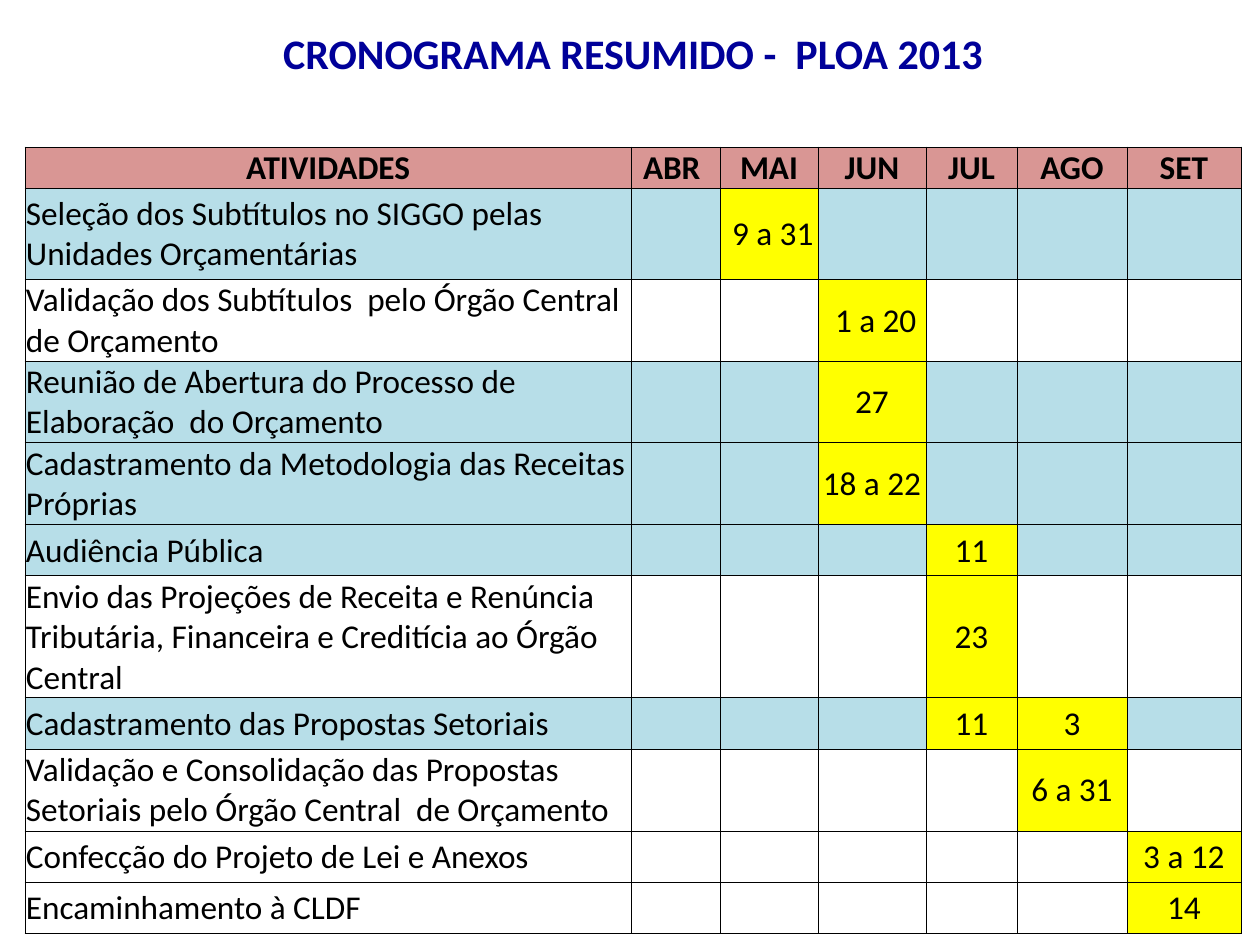
import dataclasses

import lxml.etree
import pptx
import pptx.dml.color
import pptx.enum.text
import pptx.oxml.ns
import pptx.util

PX = 914400 / 126  # one pixel in EMU


@dataclasses.dataclass(frozen=True)
class Theme:
    font: str = "Calibri"
    title_size: int = 24
    body_size: int = 19
    spacer_size: int = 6
    title: str = "000099"
    text: str = "000000"
    header: str = "D99694"
    shaded: str = "B7DEE8"
    plain: str = "FFFFFF"
    period: str = "FFFF00"
    border: str = "000000"
    border_width: float = 0.5


THEME = Theme()
PLAIN_TABLE_STYLE = "{2D5ABB26-0587-4C30-8999-92F81FD0307C}"

TITLE = "CRONOGRAMA RESUMIDO -  PLOA 2013"
HEADINGS = ["ATIVIDADES", "ABR ", "MAI", "JUN", "JUL", "AGO", "SET"]
COLUMN_WIDTHS = [606, 89, 98, 108, 91, 110, 114]
TITLE_HEIGHT, SPACER_HEIGHT, HEADER_HEIGHT = 103, 15, 40

# Activity, row height, shaded row, {month column: period}
ACTIVITIES = [
    ("Seleção dos Subtítulos no SIGGO pelas Unidades Orçamentárias", 91, True, {2: " 9 a 31"}),
    ("Validação dos Subtítulos  pelo Órgão Central de Orçamento", 81, False, {3: " 1 a 20"}),
    ("Reunião de Abertura do Processo de Elaboração  do Orçamento", 81, True, {3: "27"}),
    ("Cadastramento da Metodologia das Receitas Próprias", 82, True, {3: "18 a 22"}),
    ("Audiência Pública", 45, True, {4: "11"}),
    ("Envio das Projeções de Receita e Renúncia Tributária, Financeira e Creditícia ao Órgão Central",
     121, False, {4: "23"}),
    ("Cadastramento das Propostas Setoriais", 45, True, {4: "11", 5: "3"}),
    ("Validação e Consolidação das Propostas Setoriais pelo Órgão Central  de Orçamento",
     82, False, {5: "6 a 31"}),
    ("Confecção do Projeto de Lei e Anexos", 44, False, {6: "3 a 12"}),
    ("Encaminhamento à CLDF", 45, False, {6: "14"}),
]


def emu(pixels):
    return pptx.util.Emu(round(pixels * PX))


def set_borders(cell):
    properties = cell._tc.get_or_add_tcPr()
    for position, side in enumerate(("lnL", "lnR", "lnT", "lnB")):
        line = lxml.etree.Element(pptx.oxml.ns.qn(f"a:{side}"),
                                  w=str(pptx.util.Pt(THEME.border_width)))
        fill = lxml.etree.SubElement(line, pptx.oxml.ns.qn("a:solidFill"))
        lxml.etree.SubElement(fill, pptx.oxml.ns.qn("a:srgbClr"), val=THEME.border)
        properties.insert(position, line)


def write_cell(cell, text, size=THEME.body_size, color=THEME.text, bold=False,
               centered=True, anchor=pptx.enum.text.MSO_ANCHOR.MIDDLE):
    cell.margin_left = cell.margin_right = cell.margin_top = emu(1)
    cell.margin_bottom = 0
    cell.vertical_anchor = anchor
    para = cell.text_frame.paragraphs[0]
    para.text = text
    para.alignment = (pptx.enum.text.PP_ALIGN.CENTER if centered
                      else pptx.enum.text.PP_ALIGN.LEFT)
    para.font.name = THEME.font
    para.font.size = pptx.util.Pt(size)
    para.font.bold = bold
    para.font.color.rgb = pptx.dml.color.RGBColor.from_string(color)


def paint_cell(cell, color):
    cell.fill.solid()
    cell.fill.fore_color.rgb = pptx.dml.color.RGBColor.from_string(color)
    set_borders(cell)


def add_title_rows(table):
    # Title across all columns
    title = table.cell(0, 0)
    title.merge(table.cell(0, len(HEADINGS) - 1))
    write_cell(title, TITLE, THEME.title_size, THEME.title, bold=True,
               anchor=pptx.enum.text.MSO_ANCHOR.TOP)
    # Thin empty row below the title
    for cell in table.rows[1].cells:
        cell.margin_top = cell.margin_bottom = 0
        ending = cell.text_frame.paragraphs[0]._p.get_or_add_endParaRPr()
        ending.set("sz", str(THEME.spacer_size * 100))


def add_header_row(table):
    for cell, heading in zip(table.rows[2].cells, HEADINGS):
        write_cell(cell, heading, bold=True)
        paint_cell(cell, THEME.header)


def add_activity_row(row, activity, shaded, periods):
    for column, cell in enumerate(row.cells):
        background = THEME.shaded if shaded else THEME.plain
        if column == 0:
            write_cell(cell, activity, centered=False)
        elif column in periods:
            write_cell(cell, periods[column])
            background = THEME.period
        paint_cell(cell, background)


def add_schedule(page, left, top):
    heights = [TITLE_HEIGHT, SPACER_HEIGHT, HEADER_HEIGHT]
    heights += [height for _, height, _, _ in ACTIVITIES]
    frame = page.shapes.add_table(len(heights), len(HEADINGS), emu(left), emu(top),
                                  emu(sum(COLUMN_WIDTHS)), emu(sum(heights)))
    table = frame.table
    table.first_row = table.horz_banding = False
    table._tbl.tblPr.find(pptx.oxml.ns.qn("a:tableStyleId")).text = PLAIN_TABLE_STYLE
    for column, width in zip(table.columns, COLUMN_WIDTHS):
        column.width = emu(width)
    for row, height in zip(table.rows, heights):
        row.height = emu(height)

    add_title_rows(table)
    add_header_row(table)
    for index, (activity, _, shaded, periods) in enumerate(ACTIVITIES, start=3):
        add_activity_row(table.rows[index], activity, shaded, periods)


def main():
    deck = pptx.Presentation()
    deck.slide_width, deck.slide_height = emu(1260), emu(945)
    page = deck.slides.add_slide(deck.slide_layouts[6])
    add_schedule(page, left=25, top=29)
    deck.save("out.pptx")


if __name__ == "__main__":
    main()
